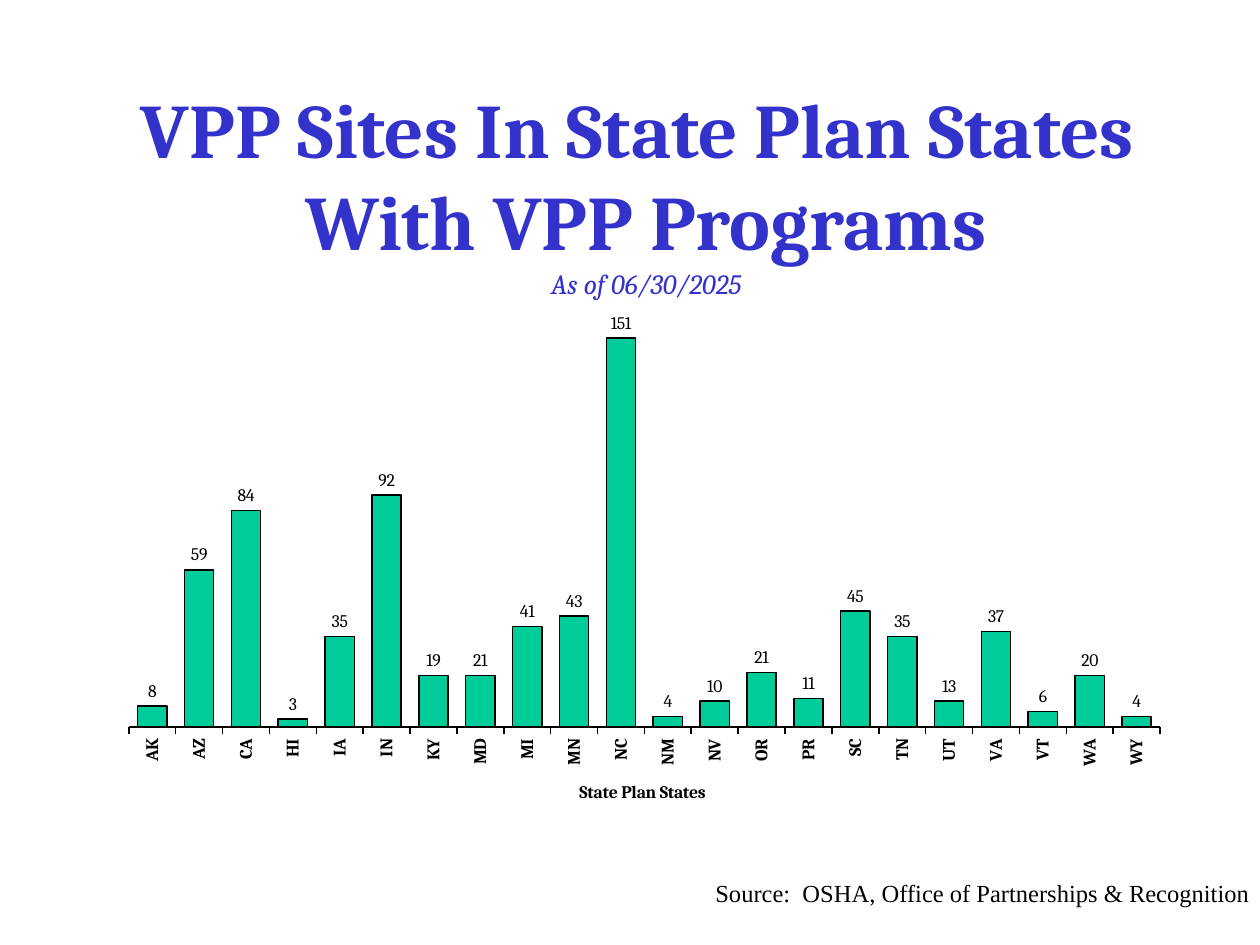
from lxml import etree
from pptx import Presentation
from pptx.chart.data import CategoryChartData
from pptx.dml.color import RGBColor
from pptx.enum import chart as c, text as t
from pptx.util import Inches, Pt

COLORS = {"title": "3333CC", "bar": "00CC99", "ink": "000000"}
SITES = {
    "AK": 8, "AZ": 61, "CA": 84, "HI": 3, "IA": 35, "IN": 90, "KY": 20, "MD": 20,
    "MI": 39, "MN": 43, "NC": 151, "NM": 4, "NV": 10, "OR": 21, "PR": 11, "SC": 45,
    "TN": 35, "UT": 10, "VA": 37, "VT": 6, "WA": 20, "WY": 4,
}
# Labels whose text differs from the height of the bar
LABELS = {"AZ": "59", "IN": "92", "KY": "19", "MD": "21", "MI": "41", "UT": "13"}
PLOT = {"x": 0.032, "y": 0.019, "w": 0.963, "h": 0.769}


def format_font(font, color="ink", **values):
    font.color.rgb = RGBColor.from_string(COLORS[color])
    for name, value in values.items():
        setattr(font, name, value)


def format_line(line):
    line.color.rgb = RGBColor.from_string(COLORS["ink"])
    line.width = Pt(0.88)


presentation = Presentation()
presentation.slide_width, presentation.slide_height = Inches(10), Inches(7.5)
slide = presentation.slides.add_slide(presentation.slide_layouts[5])

# Title, rising from the date line at its foot
title = slide.shapes.title
title.left, title.top = Inches(0.67), Inches(1.67)
title.width, title.height = Inches(8.92), Inches(1.17)
frame = title.text_frame
frame.auto_size = t.MSO_AUTO_SIZE.NONE
frame.word_wrap = True
frame.vertical_anchor = t.MSO_ANCHOR.BOTTOM
frame.margin_bottom = Inches(0.46)
paragraph = frame.paragraphs[0]
paragraph.alignment = t.PP_ALIGN.CENTER
title_lines = [
    ("VPP Sites In State Plan States ", {"size": Pt(44), "bold": True}),
    ("With VPP Programs", {"size": Pt(44), "bold": True}),
    ("As of 06/30/2025", {"size": Pt(16), "bold": False, "italic": True}),
]
for index, (words, values) in enumerate(title_lines):
    if index:
        paragraph.add_line_break()
    run = paragraph.add_run()
    run.text = words
    format_font(run.font, "title", name="Cambria", **values)

# Column chart
data = CategoryChartData()
data.categories = list(SITES)
data.add_series("Series 1", list(SITES.values()))
chart = slide.shapes.add_chart(
    c.XL_CHART_TYPE.COLUMN_CLUSTERED,
    Inches(0.75), Inches(2.42), Inches(8.5), Inches(4.25), data,
).chart
chart.has_title = chart.has_legend = False
chart_font = {"name": "Cambria", "size": Pt(10.1)}
format_font(chart.font, bold=True, **chart_font)

category_axis = chart.category_axis
category_axis.tick_label_position = c.XL_TICK_LABEL_POSITION.LOW
category_axis.major_tick_mark = c.XL_TICK_MARK.OUTSIDE
format_line(category_axis.format.line)
format_font(category_axis.tick_labels.font, bold=True, **chart_font)
category_axis._element.txPr.bodyPr.set("rot", "-5400000")
axis_title = category_axis.axis_title.text_frame
axis_title.text = "State Plan States "
format_font(axis_title.paragraphs[0].runs[0].font, bold=True, **chart_font)

value_axis = chart.value_axis
value_axis_format = {
    "minimum_scale": 0,
    "maximum_scale": 160,
    "has_major_gridlines": False,
    "major_tick_mark": c.XL_TICK_MARK.NONE,
    "tick_label_position": c.XL_TICK_LABEL_POSITION.NONE,
}
for name, value in value_axis_format.items():
    setattr(value_axis, name, value)
value_axis.format.line.fill.background()

plot = chart.plots[0]
plot.gap_width = 60
plot.vary_by_categories = False
series = plot.series[0]
series.format.fill.solid()
series.format.fill.fore_color.rgb = RGBColor.from_string(COLORS["bar"])
format_line(series.format.line)
labels = series.data_labels
labels.show_value = True
labels.number_format, labels.number_format_is_linked = "General", False
labels.position = c.XL_LABEL_POSITION.OUTSIDE_END
format_font(labels.font, bold=False, **chart_font)
for index, state in enumerate(SITES):
    if state in LABELS:
        label = series.points[index].data_label
        label.text_frame.text = LABELS[state]
        label.position = c.XL_LABEL_POSITION.OUTSIDE_END
        format_font(label.text_frame.paragraphs[0].runs[0].font, bold=False, **chart_font)

# Fixed inner plot area
plot_area = chart._chartSpace.chart.plotArea
namespace = plot_area.nsmap["c"]
for old_layout in plot_area.findall(f"{{{namespace}}}layout"):
    plot_area.remove(old_layout)
layout = etree.Element(f"{{{namespace}}}layout")
manual = etree.SubElement(layout, f"{{{namespace}}}manualLayout")
settings = {"layoutTarget": "inner", "xMode": "edge", "yMode": "edge", **PLOT}
for name, value in settings.items():
    etree.SubElement(manual, f"{{{namespace}}}{name}").set("val", str(value))
plot_area.insert(0, layout)

# Source line
source = slide.shapes.add_textbox(Inches(5.33), Inches(6.97), Inches(4.59), Inches(0.51))
frame = source.text_frame
for side in ("left", "right", "top", "bottom"):
    setattr(frame, f"margin_{side}", 0)
frame.word_wrap = False
paragraph = frame.paragraphs[0]
paragraph.alignment = t.PP_ALIGN.RIGHT
run = paragraph.add_run()
run.text = "Source:  OSHA, Office of Partnerships & Recognition"
format_font(run.font, name="Times New Roman", size=Pt(14))

presentation.save("out.pptx")
